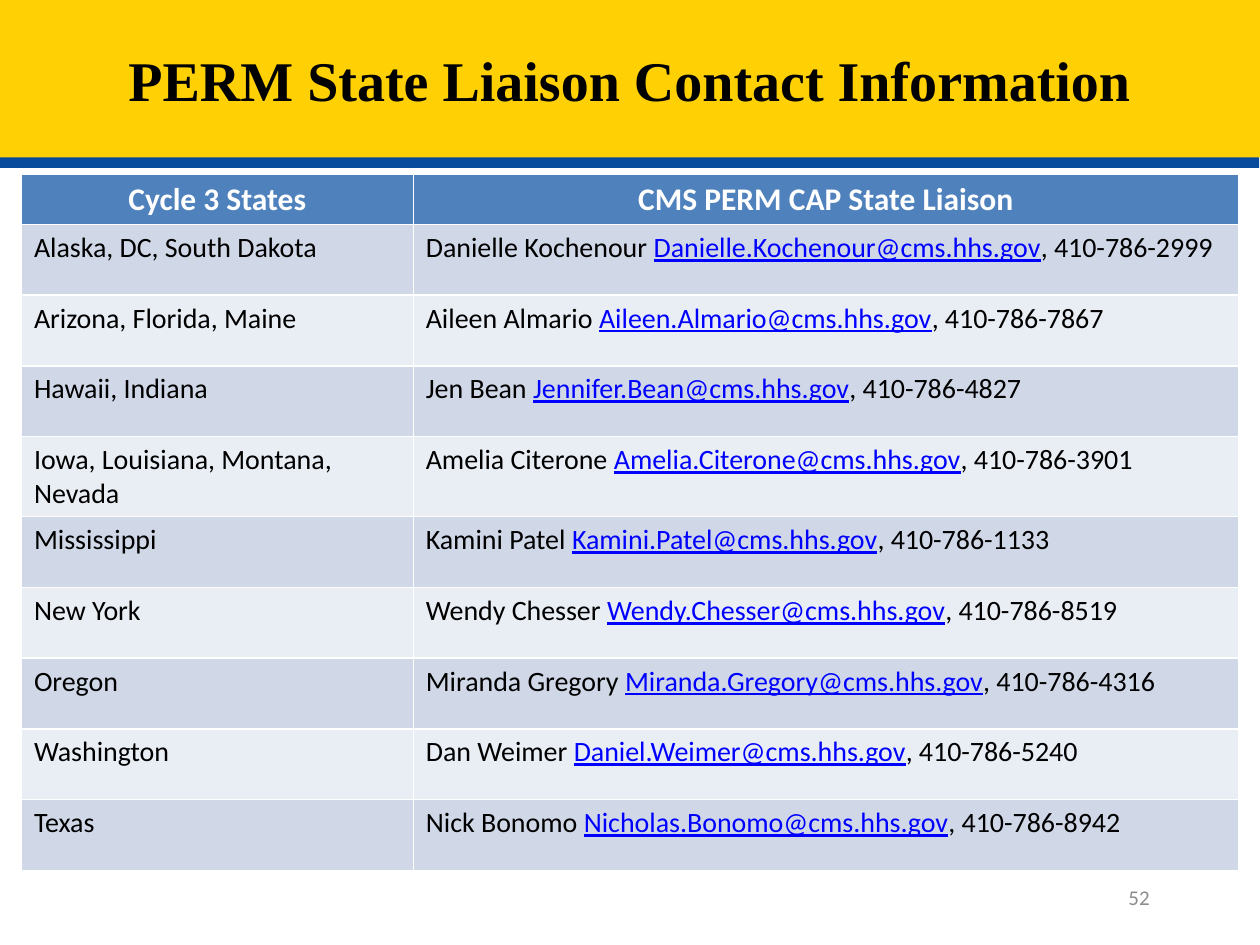
import lxml.etree
import pptx
import pptx.dml.color
import pptx.enum.shapes
import pptx.enum.text
import pptx.oxml
import pptx.oxml.ns
import pptx.util

RGB = pptx.dml.color.RGBColor
ALIGN = pptx.enum.text.PP_ALIGN
MIDDLE = pptx.enum.text.MSO_ANCHOR.MIDDLE

BLACK = RGB(0x00, 0x00, 0x00)
WHITE = RGB(0xFF, 0xFF, 0xFF)
GRAY = RGB(0x8C, 0x8C, 0x8C)
YELLOW = RGB(0xFF, 0xD0, 0x04)
NAVY = RGB(0x08, 0x4A, 0x9C)
HEADER_BLUE = RGB(0x4F, 0x81, 0xBD)
BANDS = (RGB(0xD0, 0xD8, 0xE8), RGB(0xE9, 0xED, 0xF4))
LINK_BLUE = RGB(0x00, 0x00, 0xFF)

WIDTH, HEIGHT = 10, 7.5
COLS, ROWS = 100, 75  # grid units of a tenth of an inch

HEADINGS = ("Cycle 3 States", "CMS PERM CAP State Liaison")
LIAISONS = (
    ("Alaska, DC, South Dakota", "Danielle Kochenour", "Danielle.Kochenour", "2999"),
    ("Arizona, Florida, Maine", "Aileen Almario", "Aileen.Almario", "7867"),
    ("Hawaii, Indiana", "Jen Bean", "Jennifer.Bean", "4827"),
    ("Iowa, Louisiana, Montana, Nevada", "Amelia Citerone", "Amelia.Citerone", "3901"),
    ("Mississippi", "Kamini Patel", "Kamini.Patel", "1133"),
    ("New York", "Wendy Chesser", "Wendy.Chesser", "8519"),
    ("Oregon", "Miranda Gregory", "Miranda.Gregory", "4316"),
    ("Washington", "Dan Weimer", "Daniel.Weimer", "5240"),
    ("Texas", "Nick Bonomo", "Nicholas.Bonomo", "8942"),
)


class Deck:
    """Holds the style and the current slide; lengths are grid columns and rows."""

    title_font, body_font = "Times New Roman", "Calibri"
    title_size, header_size, body_size, number_size = 32, 18, 16, 12

    def __init__(self):
        self.prs = pptx.Presentation()
        self.prs.slide_width = pptx.util.Inches(WIDTH)
        self.prs.slide_height = pptx.util.Inches(HEIGHT)
        self.s = self.prs.slides.add_slide(self.prs.slide_layouts[6])

    def x(self, cols):
        return round(self.prs.slide_width * cols / COLS)

    def y(self, rows):
        return round(self.prs.slide_height * rows / ROWS)

    def box(self, left, top, width, height):
        return self.x(left), self.y(top), self.x(width), self.y(height)

    def run(self, p, text, size, color=BLACK, font=None, bold=False, underline=False):
        r = p.add_run()
        r.text = text
        r.font.name = font or self.body_font
        r.font.size = pptx.util.Pt(size)
        r.font.bold = bold
        r.font.underline = underline
        r.font.color.rgb = color

    def hard_shadow(self, sp, color, distance, angle):
        """Replace the shape's shadow by an unblurred one, offset by points and degrees."""
        sp.shadow.inherit = False
        effects = sp._element.spPr.find(pptx.oxml.ns.qn("a:effectLst"))
        shadow = lxml.etree.SubElement(
            effects, pptx.oxml.ns.qn("a:outerShdw"), blurRad="0",
            dist=str(pptx.util.Pt(distance)), dir=str(angle * 60000),
            algn="ctr", rotWithShape="0")
        lxml.etree.SubElement(shadow, pptx.oxml.ns.qn("a:srgbClr"), val=str(color))

    def title_band(self, text, height):
        sp = self.s.shapes.add_shape(pptx.enum.shapes.MSO_SHAPE.RECTANGLE,
                                     *self.box(0, 0, COLS, height))
        sp.fill.solid()
        sp.fill.fore_color.rgb = YELLOW
        sp.line.fill.background()
        self.hard_shadow(sp, NAVY, 6, 94)
        tf = sp.text_frame
        tf.word_wrap = True
        tf.vertical_anchor = MIDDLE
        p = tf.paragraphs[0]
        p.alignment = ALIGN.CENTER
        self.run(p, text, self.title_size, font=self.title_font, bold=True)

    def page_number(self, text, *place):
        tf = self.s.shapes.add_textbox(*self.box(*place)).text_frame
        tf.word_wrap = True
        tf.vertical_anchor = MIDDLE
        p = tf.paragraphs[0]
        p.alignment = ALIGN.CENTER
        self.run(p, text, self.number_size, GRAY)

    def cell(self, table, row, col, fill):
        """Fill a cell and return its paragraph."""
        cell = table.cell(row, col)
        cell.fill.solid()
        cell.fill.fore_color.rgb = fill
        return cell.text_frame.paragraphs[0]

    def liaison_table(self, left, top, col_widths, header_height, row_height):
        height = header_height + row_height * len(LIAISONS)
        table = self.s.shapes.add_table(
            len(LIAISONS) + 1, len(HEADINGS),
            *self.box(left, top, sum(col_widths), height)).table
        for column, width in zip(table.columns, col_widths):
            column.width = self.x(width)
        for i, row in enumerate(table.rows):
            row.height = self.y(row_height if i else header_height)

        for col, heading in enumerate(HEADINGS):
            p = self.cell(table, 0, col, HEADER_BLUE)
            p.alignment = ALIGN.CENTER
            self.run(p, heading, self.header_size, WHITE, bold=True)
        for row, (states, name, mailbox, extension) in enumerate(LIAISONS, 1):
            fill = BANDS[(row - 1) % 2]
            self.run(self.cell(table, row, 0, fill), states, self.body_size)
            p = self.cell(table, row, 1, fill)
            self.run(p, f"{name} ", self.body_size)
            self.run(p, f"{mailbox}@cms.hhs.gov", self.body_size, LINK_BLUE, underline=True)
            self.run(p, f", 410-786-{extension}", self.body_size)


def main():
    deck = Deck()
    deck.title_band("PERM State Liaison Contact Information", 12.5)
    deck.page_number("52", 85, 69.2, 10.8, 4)
    deck.liaison_table(1.7, 13.8, (31.1, 65.5), 3.6, 5.62)
    deck.prs.save("out.pptx")


if __name__ == "__main__":
    main()
